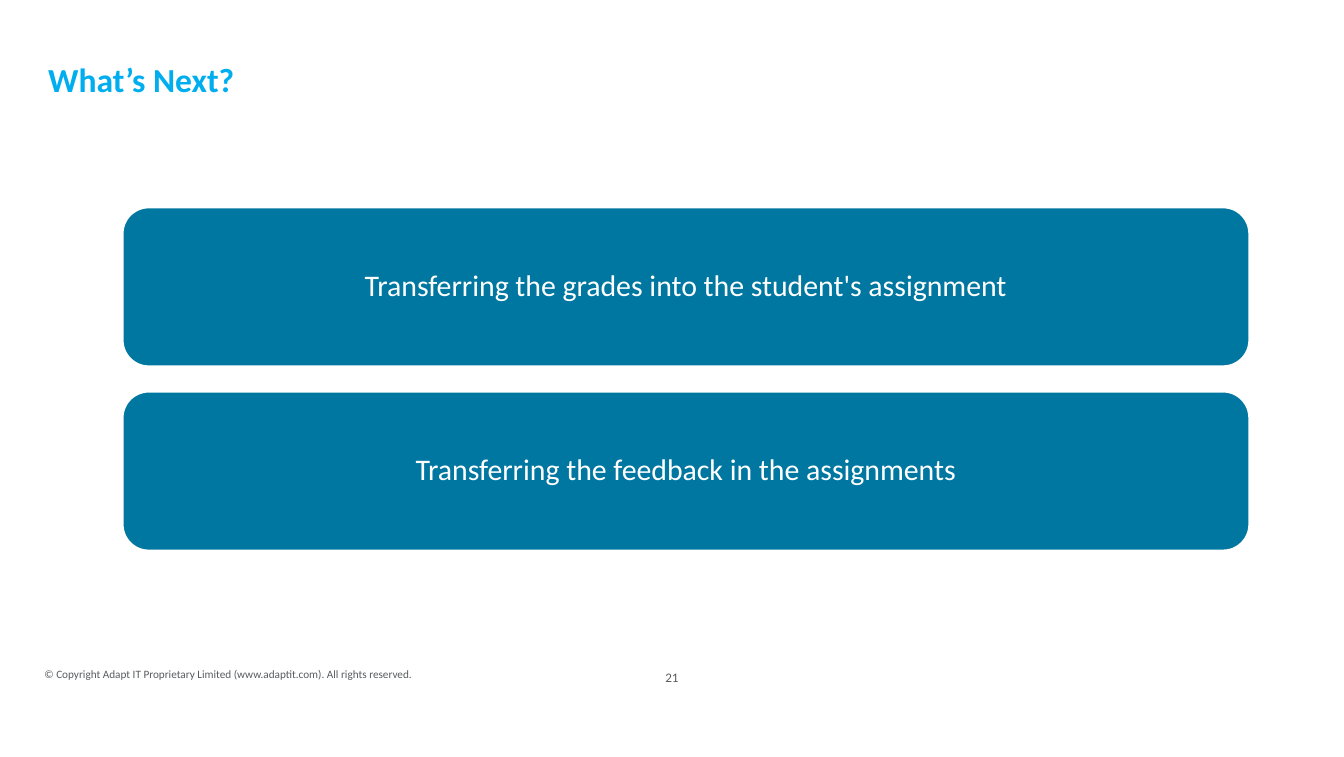
from pptx import Presentation
from pptx.dml.color import RGBColor
from pptx.enum.shapes import MSO_SHAPE
from pptx.enum.text import MSO_ANCHOR, PP_ALIGN
from pptx.util import Cm, Pt


def color(code):
    return RGBColor.from_string(code)


def write(frame, text, size, code, align=PP_ALIGN.LEFT, bold=False, inset=0):
    frame.word_wrap = True
    frame.vertical_anchor = MSO_ANCHOR.MIDDLE
    frame.margin_left = frame.margin_right = Cm(inset)
    frame.margin_top = frame.margin_bottom = Cm(inset)
    para = frame.paragraphs[0]
    para.alignment = align
    run = para.add_run()
    run.text = text
    run.font.name = "Calibri"
    run.font.size = Pt(size)
    run.font.bold = bold
    run.font.color.rgb = color(code)
    return para


deck = Presentation()
deck.slide_width, deck.slide_height = Cm(25.4), Cm(14.3)
slide = deck.slides.add_slide(deck.slide_layouts[5])

# Title
title = slide.shapes.title
title.left, title.top = Cm(0.91), Cm(0.81)
title.width, title.height = Cm(23.57), Cm(1.35)
para = write(title.text_frame, "What’s Next?", 18, "00AEEF", bold=True)
para.line_spacing = Pt(22.6)

# Next steps
steps = [
    "Transferring the grades into the student's assignment",
    "Transferring the feedback in the assignments",
]
for row, step in enumerate(steps):
    card = slide.shapes.add_shape(
        MSO_SHAPE.ROUNDED_RECTANGLE,
        Cm(2.31), Cm(3.91 + row * 3.48), Cm(21.31), Cm(3.02))
    card.shadow.inherit = False
    card.fill.solid()
    card.fill.fore_color.rgb = color("0077A0")
    card.line.color.rgb = color("FFFFFF")
    card.line.width = Pt(1.5)
    para = write(card.text_frame, step, 16, "FFFFFF", PP_ALIGN.CENTER, inset=0.17)
    para.line_spacing = 0.9

# Footer: copyright and page number
notes = [
    ("© Copyright Adapt IT Proprietary Limited (www.adaptit.com). All rights reserved.",
     6, PP_ALIGN.LEFT, 0.84, 8.76, 1.17),
    ("21", 7, PP_ALIGN.CENTER, 10.95, 3.5, 1.32),
]
for text, size, align, left, width, height in notes:
    box = slide.shapes.add_textbox(Cm(left), Cm(12.14), Cm(width), Cm(height))
    write(box.text_frame, text, size, "585C5E", align)

deck.save("out.pptx")
